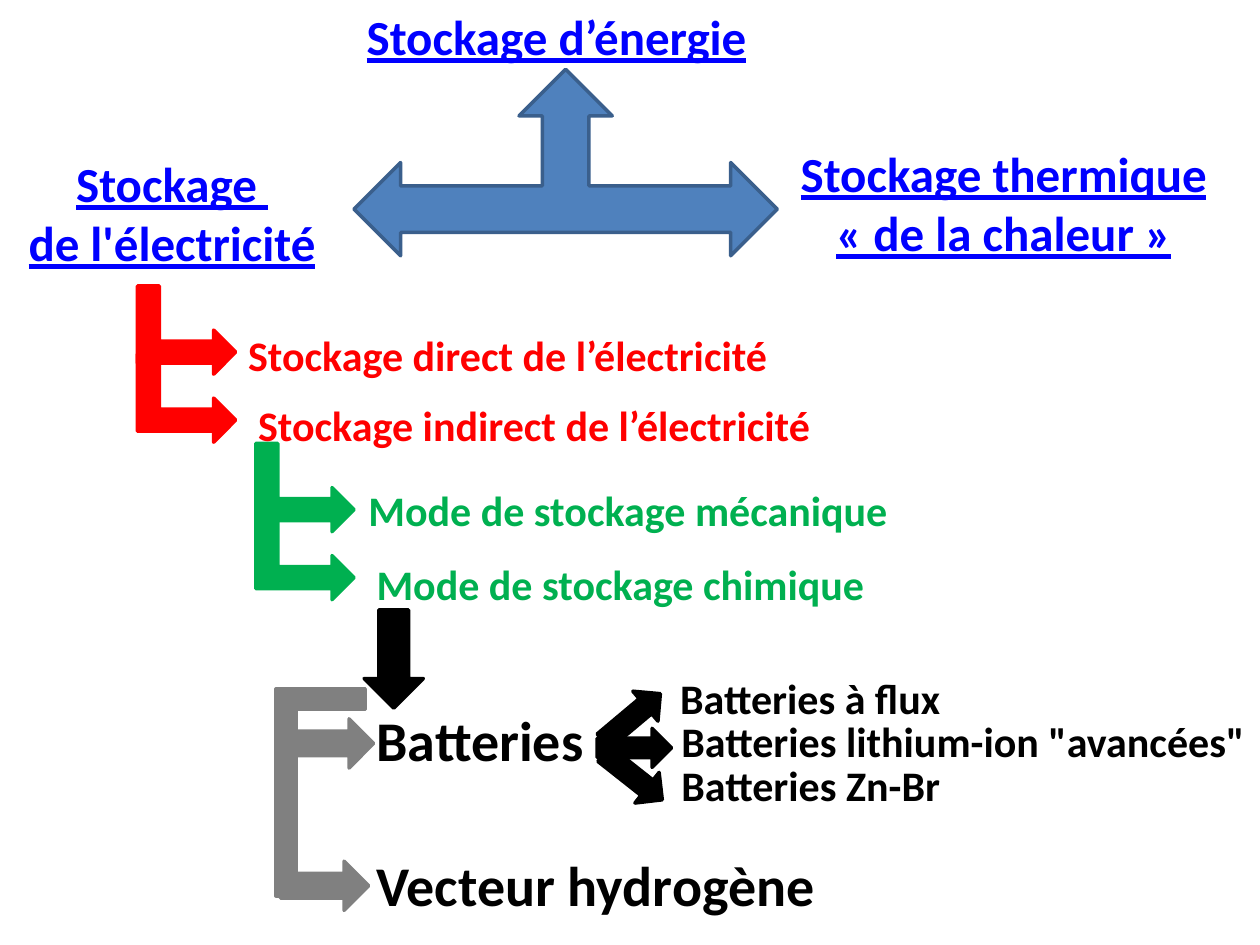
from pptx import Presentation
from pptx.dml.color import RGBColor
from pptx.enum.shapes import MSO_SHAPE
from pptx.enum.text import MSO_ANCHOR, MSO_AUTO_SIZE, PP_ALIGN
from pptx.util import Inches, Pt

BLUE, RED, GREEN, BLACK, GREY = "0000FF", "FF0000", "00B050", "000000", "808080"
STEEL, STEEL_EDGE = "4F81BD", "3A5F8C"

# Content: text, (left, top, width, height)
TITLE = ("Stockage d’énergie", (2.81, 0, 3.28, 0.57))
FAMILIES = [
    ("Stockage \nde l'électricité", (-0.08, 1.17, 2.89, 1.04)),
    ("Stockage thermique « de la chaleur »", (6.17, 1.09, 3.59, 1.04)),
]
# Text, box, size, colour
LABELS = [
    ("Stockage direct de l’électricité", (1.87, 2.57, 4.61, 0.5), 24, RED),
    ("Stockage indirect de l’électricité", (1.95, 3.12, 4.92, 0.5), 24, RED),
    (" Mode de stockage mécanique", (2.75, 3.8, 4.51, 0.5), 24, GREEN),
    ("Mode de stockage chimique", (2.89, 4.38, 4.3, 0.5), 24, GREEN),
    ("Batteries", (2.89, 5.55, 2.03, 0.64), 32, BLACK),
    ("Vecteur hydrogène", (2.89, 6.7, 3.75, 0.64), 32, BLACK),
    ("Batteries à flux", (5.3, 5.29, 2.34, 0.5), 24, BLACK),
    ("Batteries lithium-ion \"avancées\"", (5.31, 5.63, 4.69, 0.5), 24, BLACK),
    ("Batteries Zn-Br", (5.31, 5.98, 2.58, 0.5), 24, BLACK),
]
# Left and top of the first elbow arrow, colour; the second sits one step below
ELBOWS = [(1.13, 2.23, RED), (2.07, 3.48, GREEN)]
ELBOW_STEP = 0.54
# Grey bracket: trunk and top bar, then the arrows to its two branches
BRACKET_BARS = [(2.19, 5.47, 0.16, 1.64), (2.27, 5.47, 0.63, 0.16)]
BRACKET_ARROWS = [(2.42, 5.55), (2.38, 6.68)]
# Fan from "Batteries" to its three types: left, top, rotation
FAN = [(4.74, 5.78, 180), (4.72, 5.54, 140), (4.73, 6.01, 218.3)]


def rgb(value):
    return RGBColor.from_string(value)


def place(item, area):
    item.left, item.top, item.width, item.height = map(Inches, area)


def write(box, text, size, color, align=PP_ALIGN.LEFT, underline=False, wrap=False):
    frame = box.text_frame
    frame.text = text
    frame.word_wrap = wrap
    frame.auto_size = MSO_AUTO_SIZE.SHAPE_TO_FIT_TEXT
    frame.vertical_anchor = MSO_ANCHOR.TOP
    for para in frame.paragraphs:
        para.alignment = align
        for span in para.runs:
            font = span.font
            font.name, font.size, font.bold = "Calibri", Pt(size), True
            font.underline = underline
            font.color.rgb = rgb(color)


def add_block(page, kind, area, color, rotation=0, edge=None):
    shape = page.shapes.add_shape(kind, *map(Inches, area))
    shape.rotation = rotation
    shape.shadow.inherit = False
    shape.fill.solid()
    shape.fill.fore_color.rgb = rgb(color)
    shape.line.color.rgb = rgb(edge or color)
    shape.line.width = Pt(2)


def main():
    deck = Presentation()
    deck.slide_width, deck.slide_height = Inches(10), Inches(7.5)
    page = deck.slides.add_slide(deck.slide_layouts[5])

    # Title and the two families, joined by the three-way arrow
    title, title_area = TITLE
    place(page.shapes.title, title_area)
    write(page.shapes.title, title, 28, BLUE, underline=True)
    add_block(page, MSO_SHAPE.LEFT_RIGHT_UP_ARROW, (2.81, 0.55, 3.36, 1.48),
              STEEL, edge=STEEL_EDGE)
    for text, area in FAMILIES:
        box = page.shapes.add_textbox(*map(Inches, area))
        write(box, text, 28, BLUE, PP_ALIGN.CENTER, underline=True, wrap=True)

    # Elbow arrows of the electricity branch
    for left, top, color in ELBOWS:
        for row in range(2):
            area = (left, top + row * ELBOW_STEP, 0.7, 0.78)
            add_block(page, MSO_SHAPE.BENT_UP_ARROW, area, color, 90)

    # Chemical storage: down arrow, bracket and fan
    add_block(page, MSO_SHAPE.DOWN_ARROW, (2.89, 4.84, 0.47, 0.78), BLACK)
    for area in BRACKET_BARS:
        add_block(page, MSO_SHAPE.RECTANGLE, area, GREY)
    for left, top in BRACKET_ARROWS:
        add_block(page, MSO_SHAPE.UP_ARROW, (left, top, 0.39, 0.7), GREY, 90)
    for left, top, rotation in FAN:
        add_block(page, MSO_SHAPE.LEFT_ARROW, (left, top, 0.59, 0.31), BLACK, rotation)

    # Branch labels
    for text, area, size, color in LABELS:
        box = page.shapes.add_textbox(*map(Inches, area))
        write(box, text, size, color)

    deck.save("out.pptx")


if __name__ == "__main__":
    main()
